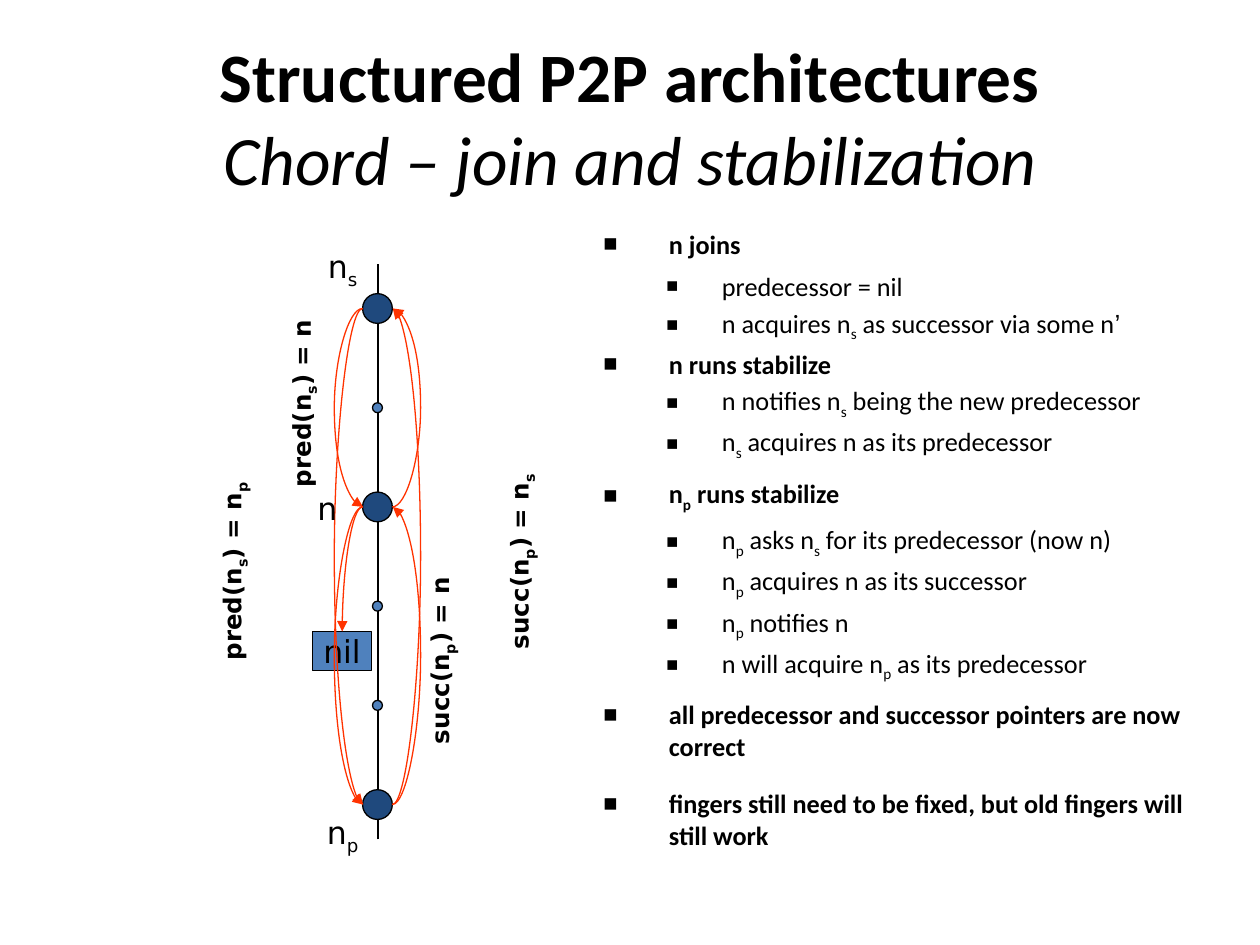
"""Build the slide on joining and stabilizing a Chord ring."""
from lxml import etree
from pptx import Presentation
from pptx import util as u
from pptx.dml.color import RGBColor
from pptx.enum import shapes, text
from pptx.oxml.ns import qn

COLORS = {"ink": "000000", "node": "1F497D", "dot": "4F81BD", "pointer": "FF3300"}
TITLE = [("Structured P2P architectures", True), ("Chord – join and stabilization", False)]
POINTS = [
    (0, 50, 30, "n joins"),
    (1, 10, 10, "predecessor = nil"),
    (1, 10, 10, "n acquires n_s as successor via some n’"),
    (0, 10, 10, "n runs stabilize"),
    (1, 10, 10, "n notifies n_s being the new predecessor"),
    (1, 10, 10, "n_s acquires n as its predecessor"),
    (0, 50, 30, "n_p runs stabilize"),
    (1, 10, 10, "n_p asks n_s for its predecessor (now n)"),
    (1, 10, 10, "n_p acquires n as its successor"),
    (1, 10, 10, "n_p notifies n"),
    (1, 10, 10, "n will acquire n_p as its predecessor"),
    (0, 50, 50, "all predecessor and successor pointers are now correct"),
    (0, 50, 50, "fingers still need to be fixed, but old fingers will still work"),
]
LEVELS = [
    {"margin": 1.32, "hang": 1.32, "bullet": 90},
    {"margin": 2.39, "hang": 1.12, "bullet": 75},
]
NODE_LABELS = [("n_s", 6.91, 5.42), ("n", 6.6, 10.23), ("n_p", 6.91, 16.83)]
POINTER_LABELS = [
    ("succ(n_p) = n_s", 10.5, 11.32),
    ("pred(n_s) = n_p", 4.71, 11.52),
    ("pred(n_s) = n", 6.11, 8.13),
    ("succ(n_p) = n", 8.9, 13.32),
]
RING_X, RING_TOP, STEP = 7.61, 6.22, 2
NODE_SIZE, DOT_SIZE = 0.6, 0.2
SUCC_NODE, NEW_NODE, PRED_NODE = 0, 2, 5
NODES = (SUCC_NODE, NEW_NODE, PRED_NODE)
ARCS = [(SUCC_NODE, PRED_NODE), (SUCC_NODE, NEW_NODE), (NEW_NODE, PRED_NODE)]
BULGE, SLIVER = 0.57, 0.01


def color(name):
    return RGBColor.from_string(COLORS[name])


def ring_y(slot):
    return RING_TOP + slot * STEP


def add_span(para, words, font, size, bold=False, italic=False, lowered=False):
    span = para.add_run()
    span.text = words
    span.font.name, span.font.size = font, u.Pt(size)
    span.font.bold, span.font.italic = bold, italic
    span.font.color.rgb = color("ink")
    if lowered:
        span.font._element.set("baseline", "-25000")


def add_words(para, words, font, size, bold=False):
    first, *others = words.split("_")
    pieces = [(first, False)]
    for other in others:
        pieces += [(other[0], True), (other[1:], False)]
    for piece, lowered in pieces:
        plain, mark, _ = piece.partition("’")
        if plain:
            add_span(para, plain, font, size, bold, lowered=lowered)
        if mark:
            add_span(para, mark, "Arial", size, bold)


def center_text(shape, words, size, bold=False):
    frame = shape.text_frame
    frame.word_wrap = False
    frame.margin_left = frame.margin_right = frame.margin_top = frame.margin_bottom = 0
    frame.vertical_anchor = text.MSO_ANCHOR.MIDDLE
    para = frame.paragraphs[0]
    para.alignment = text.PP_ALIGN.CENTER
    add_words(para, words, "DejaVu Sans", size, bold)


def add_label(page, words, x, y, width, height, size, bold=False, turn=0):
    box = page.shapes.add_textbox(
        u.Cm(x - width / 2), u.Cm(y - height / 2), u.Cm(width), u.Cm(height))
    box.rotation = turn
    center_text(box, words, size, bold)


def add_solid(page, kind, left, top, width, height, fill):
    shape = page.shapes.add_shape(kind, u.Cm(left), u.Cm(top), u.Cm(width), u.Cm(height))
    shape.shadow.inherit = False
    shape.fill.solid()
    shape.fill.fore_color.rgb = color(fill)
    shape.line.color.rgb = color("ink")
    shape.line.width = u.Pt(0.75)
    return shape


def add_line(page, kind, start, end, name):
    line = page.shapes.add_connector(kind, *(u.Cm(value) for value in (*start, *end)))
    line.line.color.rgb = color(name)
    line.line.width = u.Pt(0.75)
    etree.SubElement(line._element.spPr, qn("a:effectLst"))
    return line


def add_pointer(page, start, end, preset, bend=None):
    line = add_line(page, shapes.MSO_CONNECTOR.CURVE, start, end, "pointer")
    etree.SubElement(line.line._get_or_add_ln(), qn("a:tailEnd"), type="triangle")
    geometry = line._element.spPr.find(qn("a:prstGeom"))
    geometry.set("prst", preset)
    if bend is not None:
        guides = geometry.find(qn("a:avLst"))
        if guides is None:
            guides = etree.SubElement(geometry, qn("a:avLst"))
        etree.SubElement(guides, qn("a:gd"), name="adj1", fmla=f"val {round(bend * 100000)}")


def format_point(para, level, before, after):
    style = LEVELS[level]
    para.level = level
    props = para._p.get_or_add_pPr()
    props.set("marL", str(u.Cm(style["margin"])))
    props.set("indent", str(-u.Cm(style["hang"])))
    for tag, percent in (("a:spcBef", before), ("a:spcAft", after)):
        spacing = etree.SubElement(props, qn(tag))
        etree.SubElement(spacing, qn("a:spcPct"), val=str(percent * 1000))
    tint = etree.SubElement(props, qn("a:buClr"))
    etree.SubElement(tint, qn("a:srgbClr"), val=COLORS["ink"])
    etree.SubElement(props, qn("a:buSzPct"), val=str(style["bullet"] * 1000))
    etree.SubElement(props, qn("a:buFont"), typeface="Arial")
    etree.SubElement(props, qn("a:buChar"), char="■")


def place(shape, left, top, width, height):
    shape.left, shape.top = u.Cm(left), u.Cm(top)
    shape.width, shape.height = u.Cm(width), u.Cm(height)
    shape.text_frame.auto_size = text.MSO_AUTO_SIZE.NONE


def fill_title(title):
    place(title, 1.27, 0.76, 22.86, 3.18)
    title.text_frame.vertical_anchor = text.MSO_ANCHOR.MIDDLE
    para = title.text_frame.paragraphs[0]
    para.alignment = text.PP_ALIGN.CENTER
    for index, (words, bold) in enumerate(TITLE):
        if index:
            para.add_line_break()
        add_span(para, words, "Calibri", 39.6, bold, not bold)


def fill_body(body):
    place(body, 11.91, 4.47, 12.6, 13.64)
    frame = body.text_frame
    for index, (level, before, after, words) in enumerate(POINTS):
        para = frame.add_paragraph() if index else frame.paragraphs[0]
        format_point(para, level, before, after)
        add_words(para, words, "Calibri", 15, bold=level == 0)


def draw_ring(page):
    add_line(page, shapes.MSO_CONNECTOR.STRAIGHT, (7.62, 16.92), (7.62, 5.33), "ink")
    for slot in range(PRED_NODE + 1):
        size, fill = (NODE_SIZE, "node") if slot in NODES else (DOT_SIZE, "dot")
        add_solid(page, shapes.MSO_SHAPE.OVAL, RING_X - size / 2,
                  ring_y(slot) - size / 2, size, size, fill)
    nil = add_solid(page, shapes.MSO_SHAPE.RECTANGLE, 6.3, 12.73, 1.19, 0.79, "dot")
    center_text(nil, "nil", 18)
    left, right = RING_X - NODE_SIZE / 2, RING_X + NODE_SIZE / 2
    for upper, lower in ARCS:
        top, bottom = ring_y(upper), ring_y(lower)
        add_pointer(page, (left, top), (left + SLIVER, bottom), "curvedConnector3", -BULGE / SLIVER)
        add_pointer(page, (right, bottom), (right + SLIVER, top), "curvedConnector3", BULGE / SLIVER)
    add_pointer(page, (left, ring_y(NEW_NODE)), (6.9, 12.73), "curvedConnector2")
    for label in NODE_LABELS:
        add_label(page, *label, 0.81, 0.99, 18)
    for label in POINTER_LABELS:
        add_label(page, *label, 5.21, 0.79, 14, bold=True, turn=270)


def main():
    deck = Presentation()
    deck.slide_width, deck.slide_height = u.Cm(25.4), u.Cm(19.05)
    page = deck.slides.add_slide(deck.slide_layouts[1])
    fill_title(page.shapes.title)
    fill_body(page.placeholders[1])
    draw_ring(page)
    deck.save("out.pptx")


if __name__ == "__main__":
    main()
